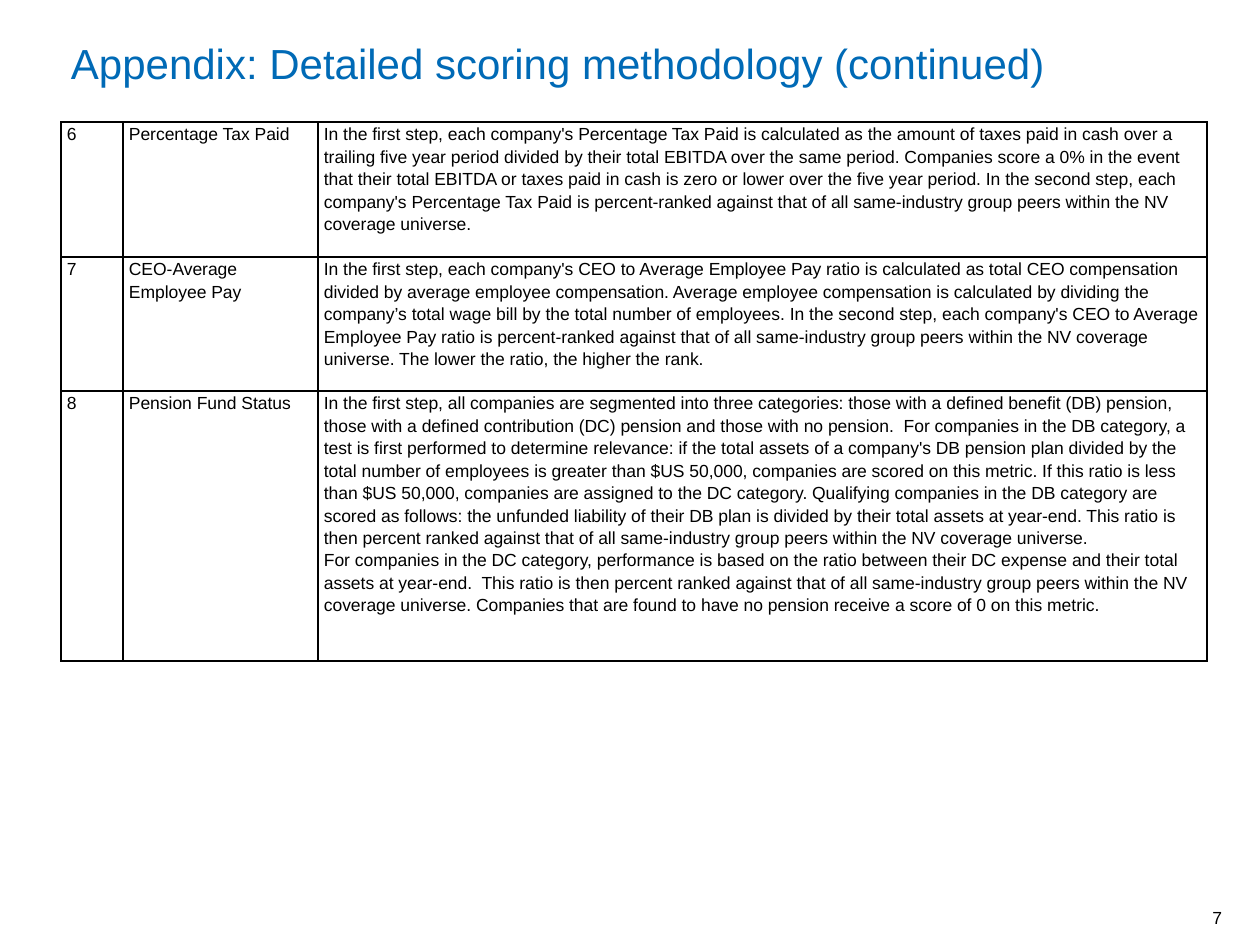
from dataclasses import dataclass

from lxml import etree
from pptx import Presentation
from pptx.dml.color import RGBColor
from pptx.enum.text import MSO_ANCHOR, PP_ALIGN
from pptx.oxml.ns import qn
from pptx.util import Emu, Pt

PX = 914400 // 126
SLIDE_SIZE = (1260, 945)
TOP, BOTTOM = MSO_ANCHOR.TOP, MSO_ANCHOR.BOTTOM
LEFT, RIGHT = PP_ALIGN.LEFT, PP_ALIGN.RIGHT
BORDER_SIDES = ("a:lnL", "a:lnR", "a:lnT", "a:lnB")
MARGIN_SIDES = ("margin_left", "margin_top", "margin_right", "margin_bottom")


@dataclass(frozen=True)
class Theme:
    font: str = "Arial"
    title_color: str = "006AB6"
    text_color: str = "000000"
    border_color: str = "000000"
    title_size: int = 24
    body_size: int = 10
    border_width: int = 1
    line_spacing: float = 1.15


THEME = Theme()

TITLE = "Appendix: Detailed scoring methodology (continued)"
PAGE_NUMBER = "7"
COLUMN_WIDTHS = (62, 195, 889)
ROW_HEIGHTS = (135, 134, 270)
PENSION_PARAGRAPHS = (
    "In the first step, all companies are segmented into three categories: those with a "
    "defined benefit (DB) pension, those with a defined contribution (DC) pension and those "
    "with no pension.  For companies in the DB category, a test is first performed to "
    "determine relevance: if the total assets of a company's DB pension plan divided by the "
    "total number of employees is greater than $US 50,000, companies are scored on this "
    "metric. If this ratio is less than $US 50,000, companies are assigned to the DC "
    "category. Qualifying companies in the DB category are scored as follows: the unfunded "
    "liability of their DB plan is divided by their total assets at year-end. This ratio is "
    "then percent ranked against that of all same-industry group peers within the NV "
    "coverage universe.",
    "For companies in the DC category, performance is based on the ratio between their DC "
    "expense and their total assets at year-end.  This ratio is then percent ranked against "
    "that of all same-industry group peers within the NV coverage universe. Companies that "
    "are found to have no pension receive a score of 0 on this metric.",
)
METRICS = (
    ("6", "Percentage Tax Paid", (
        "In the first step, each company's Percentage Tax Paid is calculated as the amount of "
        "taxes paid in cash over a trailing five year period divided by their total EBITDA over "
        "the same period. Companies score a 0% in the event that their total EBITDA or taxes "
        "paid in cash is zero or lower over the five year period. In the second step, each "
        "company's Percentage Tax Paid is percent‐ranked against that of all same‐industry "
        "group peers within the NV coverage universe.")),
    ("7", "CEO-Average Employee Pay", (
        "In the first step, each company's CEO to Average Employee Pay ratio is calculated as "
        "total CEO compensation divided by average employee compensation. Average employee "
        "compensation is calculated by dividing the company’s total wage bill by the total "
        "number of employees. In the second step, each company's CEO to Average Employee Pay "
        "ratio is percent‐ranked against that of all same‐industry group peers within the NV "
        "coverage universe. The lower the ratio, the higher the rank.")),
    ("8", "Pension Fund Status", "\n".join(PENSION_PARAGRAPHS)),
)


def px(length):
    return Emu(length * PX)


def set_attributes(target, values):
    for name, value in values.items():
        setattr(target, name, value)


def write_text(frame, text, size, color, **paragraph_format):
    frame.text = text
    for paragraph in frame.paragraphs:
        set_attributes(paragraph, paragraph_format)
        set_attributes(paragraph.font, {"name": THEME.font, "size": Pt(size)})
        paragraph.font.color.rgb = RGBColor.from_string(color)


def add_text(slide, box, text, size, color, margins, anchor, alignment):
    frame = slide.shapes.add_textbox(*map(px, box)).text_frame
    set_attributes(frame, {"word_wrap": True, "vertical_anchor": anchor})
    set_attributes(frame, dict(zip(MARGIN_SIDES, map(px, margins))))
    write_text(frame, text, size, color, alignment=alignment)


def add_borders(cell):
    properties = cell._tc.get_or_add_tcPr()
    for position, side in enumerate(BORDER_SIDES):
        line = etree.Element(qn(side), w=str(Pt(THEME.border_width)))
        fill = etree.SubElement(line, qn("a:solidFill"))
        etree.SubElement(fill, qn("a:srgbClr"), val=THEME.border_color)
        properties.insert(position, line)


def add_metric_table(slide, left, top):
    box = (left, top, sum(COLUMN_WIDTHS), sum(ROW_HEIGHTS))
    table = slide.shapes.add_table(len(METRICS), len(COLUMN_WIDTHS), *map(px, box)).table
    set_attributes(table, {"first_row": False, "horz_banding": False})
    for column, width in zip(table.columns, COLUMN_WIDTHS):
        column.width = px(width)
    for row, height, metric in zip(table.rows, ROW_HEIGHTS, METRICS):
        row.height = px(height)
        for cell, text in zip(row.cells, metric):
            set_attributes(cell, dict(zip(MARGIN_SIDES, map(px, (6, 0, 6, 0)))))
            cell.vertical_anchor = TOP
            cell.fill.background()
            add_borders(cell)
            write_text(cell.text_frame, text, THEME.body_size, THEME.text_color,
                       line_spacing=THEME.line_spacing)


def main():
    presentation = Presentation()
    presentation.slide_width, presentation.slide_height = map(px, SLIDE_SIZE)
    slide = presentation.slides.add_slide(presentation.slide_layouts[6])
    add_text(slide, (58, 32, 1084, 102), TITLE, THEME.title_size, THEME.title_color,
             (13, 6, 13, 6), TOP, LEFT)
    add_metric_table(slide, 61, 122)
    add_text(slide, (1125, 903, 97, 25), PAGE_NUMBER, THEME.body_size, THEME.text_color,
             (0, 0, 0, 0), BOTTOM, RIGHT)
    presentation.save("out.pptx")


if __name__ == "__main__":
    main()
